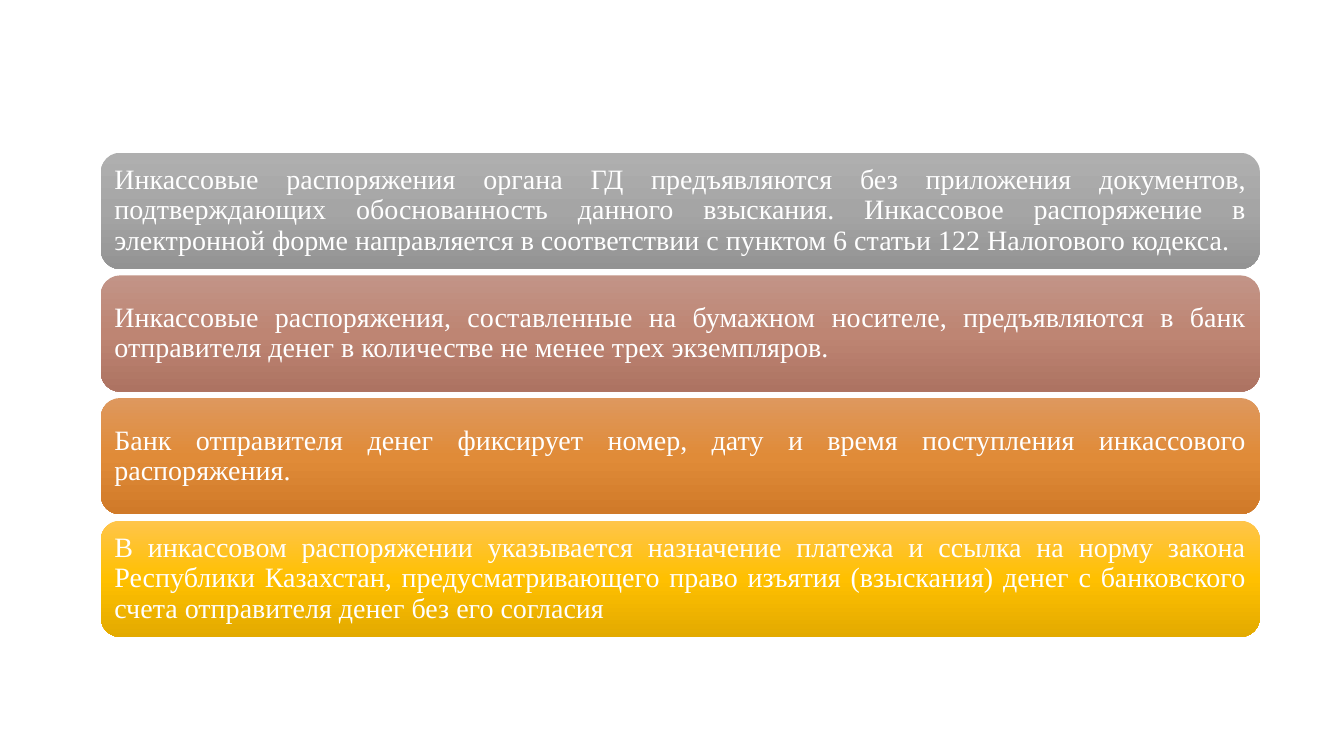
from copy import deepcopy

from pptx import Presentation
from pptx.dml.color import RGBColor
from pptx.enum.shapes import MSO_SHAPE
from pptx.enum.text import MSO_ANCHOR, PP_ALIGN
from pptx.oxml.ns import qn
from pptx.util import Cm, Pt

ROUNDED = MSO_SHAPE.ROUNDED_RECTANGLE
MIDDLE = MSO_ANCHOR.MIDDLE
JUSTIFY = PP_ALIGN.JUSTIFY

WHITE = RGBColor(0xFF, 0xFF, 0xFF)
GREY = (RGBColor(0xAF, 0xAF, 0xAF), RGBColor(0xA5, 0xA5, 0xA5), RGBColor(0x93, 0x93, 0x93))
BROWN = (RGBColor(0xC2, 0x94, 0x87), RGBColor(0xBE, 0x85, 0x73), RGBColor(0xAD, 0x73, 0x62))
ORANGE = (RGBColor(0xDE, 0x98, 0x5E), RGBColor(0xE0, 0x8B, 0x38), RGBColor(0xD0, 0x7A, 0x29))
YELLOW = (RGBColor(0xFF, 0xC5, 0x4B), RGBColor(0xFF, 0xC0, 0x00), RGBColor(0xE3, 0xAA, 0x00))

RULES = [
    ("Инкассовые распоряжения органа ГД предъявляются без приложения документов, "
     "подтверждающих обоснованность данного взыскания. Инкассовое распоряжение в "
     "электронной форме направляется в соответствии с пунктом 6 статьи 122 "
     "Налогового кодекса.", GREY),
    ("Инкассовые распоряжения, составленные на бумажном носителе, предъявляются в банк "
     "отправителя денег в количестве не менее трех экземпляров.", BROWN),
    ("Банк отправителя денег фиксирует номер, дату и время поступления инкассового "
     "распоряжения.", ORANGE),
    ("В инкассовом распоряжении указывается назначение платежа и ссылка на норму закона "
     "Республики Казахстан, предусматривающего право изъятия (взыскания) денег с "
     "банковского счета отправителя денег без его согласия", YELLOW),
]

LEFT, TOP = Cm(2.54), Cm(3.85)
WIDTH, HEIGHT, GAP = Cm(29.21), Cm(2.93), Cm(0.16)
INSET = Cm(0.2)


def paint_gradient(shape, colours):
    fill = shape.fill
    fill.gradient()
    fill.gradient_angle = 270
    stop_list = shape._element.spPr.find(qn("a:gradFill")).find(qn("a:gsLst"))
    stop_list.insert(1, deepcopy(stop_list[0]))
    for stop, position, colour in zip(fill.gradient_stops, (0, 0.5, 1), colours):
        stop.position = position
        stop.color.rgb = colour


def add_rule(page, top, text, colours):
    box = page.shapes.add_shape(ROUNDED, LEFT, top, WIDTH, HEIGHT)
    box.shadow.inherit = False
    box.line.fill.background()
    paint_gradient(box, colours)
    frame = box.text_frame
    frame.word_wrap = True
    frame.vertical_anchor = MIDDLE
    frame.margin_left = frame.margin_right = INSET
    frame.margin_top = frame.margin_bottom = INSET
    para = frame.paragraphs[0]
    para.text = text
    para.alignment = JUSTIFY
    para.line_spacing = 0.9
    para.font.name = "Times New Roman"
    para.font.size = Pt(20)
    para.font.color.rgb = WHITE


def main():
    deck = Presentation()
    deck.slide_width, deck.slide_height = Cm(33.87), Cm(19.05)
    page = deck.slides.add_slide(deck.slide_layouts[6])
    for index, (text, colours) in enumerate(RULES):
        add_rule(page, TOP + index * (HEIGHT + GAP), text, colours)
    deck.save("out.pptx")


if __name__ == "__main__":
    main()
